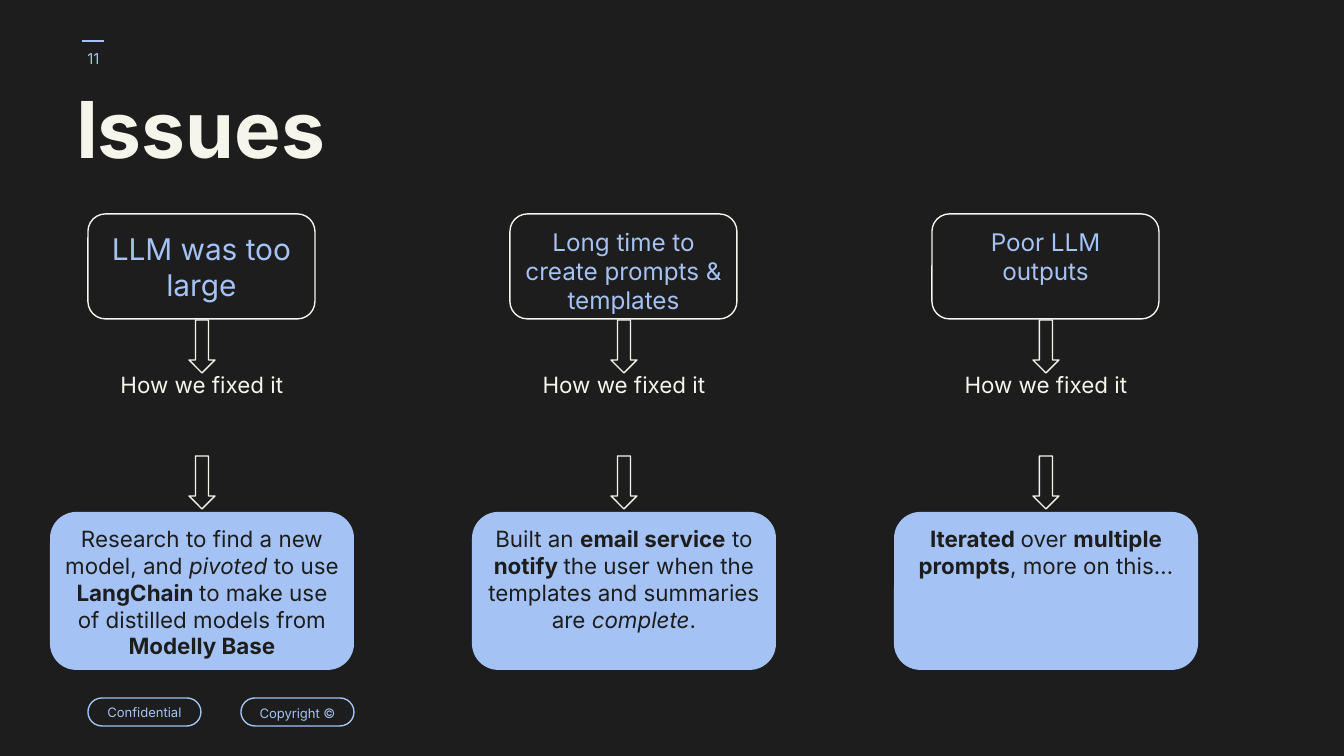
from pptx import Presentation
from pptx.dml.color import RGBColor
from pptx.enum.shapes import MSO_CONNECTOR, MSO_SHAPE
from pptx.enum.text import MSO_ANCHOR, MSO_AUTO_SIZE, PP_ALIGN
from pptx.oxml.ns import qn
from pptx.util import Pt

ROUNDED, DOWN_ARROW = MSO_SHAPE.ROUNDED_RECTANGLE, MSO_SHAPE.DOWN_ARROW
STRAIGHT = MSO_CONNECTOR.STRAIGHT
TOP, MIDDLE = MSO_ANCHOR.TOP, MSO_ANCHOR.MIDDLE
LEFT, CENTER = PP_ALIGN.LEFT, PP_ALIGN.CENTER
GROW, NO_FIT = MSO_AUTO_SIZE.SHAPE_TO_FIT_TEXT, MSO_AUTO_SIZE.NONE

SLIDE_W, SLIDE_H = 1344, 756
EMU_PER_PX = 914400 * 10 / SLIDE_W
INSET = 13
FONT = "Inter"
COLORS = {"dark": "1D1D1D", "cream": "F6F5EC", "blue": "A4C2F4"}

COLUMN_X, COLUMN_TOP, COLUMN_W, COLUMN_PITCH = 50, 214, 304, 422

# Issue: text, size, text offset and height; fix: (text, style) runs, text height
COLUMNS = [
    (("LLM was too large", 16, 4, 99),
     [("Research to find a new model, and ", ""), ("pivoted", "i"),
      (" to use ", ""), ("LangChain ", "b"),
      ("to make use of distilled models from ", ""), ("Modelly Base", "b")], 190),
    (("Long time to create prompts & templates", 13, 0, 116),
     [("Built an ", ""), ("email service", "b"), (" to ", ""), ("notify ", "b"),
      ("the user when the templates and summaries are ", ""),
      ("complete", "i"), (".", "")], 163),
    (("Poor LLM outputs", 13, 0, 86),
     [("Iterated ", "b"), ("over ", ""), ("multiple prompts", "b"),
      (", more on this…", "")], 109),
]


def px(length):
    return round(length * EMU_PER_PX)


def color(name):
    return RGBColor.from_string(COLORS[name])


def write(shape, runs, size, ink, align=CENTER, anchor=TOP, fit=NO_FIT, spacing=None):
    frame = shape.text_frame
    frame.word_wrap = True
    frame.auto_size = fit
    frame.vertical_anchor = anchor
    frame.margin_left = frame.margin_right = px(INSET)
    frame.margin_top = frame.margin_bottom = px(INSET)
    paragraph = frame.paragraphs[0]
    paragraph.alignment = align
    if spacing:
        paragraph.line_spacing = spacing
    for text, style in runs:
        run = paragraph.add_run()
        run.text = text
        run.font.name = FONT
        run.font.size = Pt(size)
        run.font.color.rgb = color(ink)
        run.font.bold = style == "b"
        run.font.italic = style == "i"


def add_text(slide, box, runs, size, ink, **layout):
    write(slide.shapes.add_textbox(*map(px, box)), runs, size, ink, **layout)


def add_block(slide, preset, box, fill=None, outline=None):
    block = slide.shapes.add_shape(preset, *map(px, box))
    block.shadow.inherit = False
    if fill:
        block.fill.solid()
        block.fill.fore_color.rgb = color(fill)
    else:
        block.fill.background()
    if outline:
        block.line.color.rgb = color(outline)
        block.line.width = Pt(0.75)
    else:
        block.line.fill.background()
    return block


def add_page_number(slide, x, y, w, h):
    add_text(slide, (x, y, w, h), [("11", "")], 8, "blue", anchor=MIDDLE)
    rule = slide.shapes.add_connector(
        STRAIGHT, px(x + 42), px(y + 11), px(x + 20), px(y + 11))
    rule.line.color.rgb = color("blue")
    rule.line.width = Pt(0.75)
    properties = rule._element.spPr
    properties.append(properties.makeelement(qn("a:effectLst"), {}))


def add_title(slide, x, y, w, h):
    title = slide.shapes.title
    title.left, title.top, title.width, title.height = map(px, (x, y, w, h))
    write(title, [("Issues", "b")], 42, "cream", align=LEFT, spacing=0.8)


def add_footer(slide, x, y, w, h):
    for index, (label, spacing) in enumerate((("Confidential", None), ("Copyright ©", 1.15))):
        pill = add_block(slide, ROUNDED, (x + index * 153, y, w, h), outline="blue")
        pill.adjustments[0] = 0.5
        write(pill, [(label, "")], 7, "blue", anchor=MIDDLE, spacing=spacing)


def add_column(slide, x, y, w, issue, fix, fix_h):
    center = x + w // 2

    # Step between issue and fix
    add_text(slide, (center - 108, y + 144, 216, 98),
             [("How we fixed it", "")], 12, "cream")

    # Issue
    issue_text, size, offset, issue_h = issue
    issue_x, issue_w = center - 114, 227
    add_block(slide, ROUNDED, (issue_x, y, issue_w, 105), outline="cream")
    add_text(slide, (issue_x, y + offset, issue_w, issue_h),
             [(issue_text, "")], size, "blue", fit=GROW)

    # Arrows
    for arrow_y in (y + 106, y + 242):
        add_block(slide, DOWN_ARROW, (center - 13, arrow_y, 26, 53), outline="cream")

    # Fix
    add_block(slide, ROUNDED, (x, y + 298, w, 158), fill="blue")
    add_text(slide, (x, y + 298, w, fix_h), fix, 12, "dark", fit=GROW)


def main():
    deck = Presentation()
    deck.slide_width, deck.slide_height = px(SLIDE_W), px(SLIDE_H)
    slide = deck.slides.add_slide(deck.slide_layouts[5])
    slide.background.fill.solid()
    slide.background.fill.fore_color.rgb = color("dark")

    add_page_number(slide, 62, 30, 63, 58)
    add_footer(slide, 88, 698, 113, 28)
    add_title(slide, 63, 85, 995, 122)
    for index, (issue, fix, fix_h) in enumerate(COLUMNS):
        add_column(slide, COLUMN_X + index * COLUMN_PITCH, COLUMN_TOP, COLUMN_W,
                   issue, fix, fix_h)
    deck.save("out.pptx")


if __name__ == "__main__":
    main()
